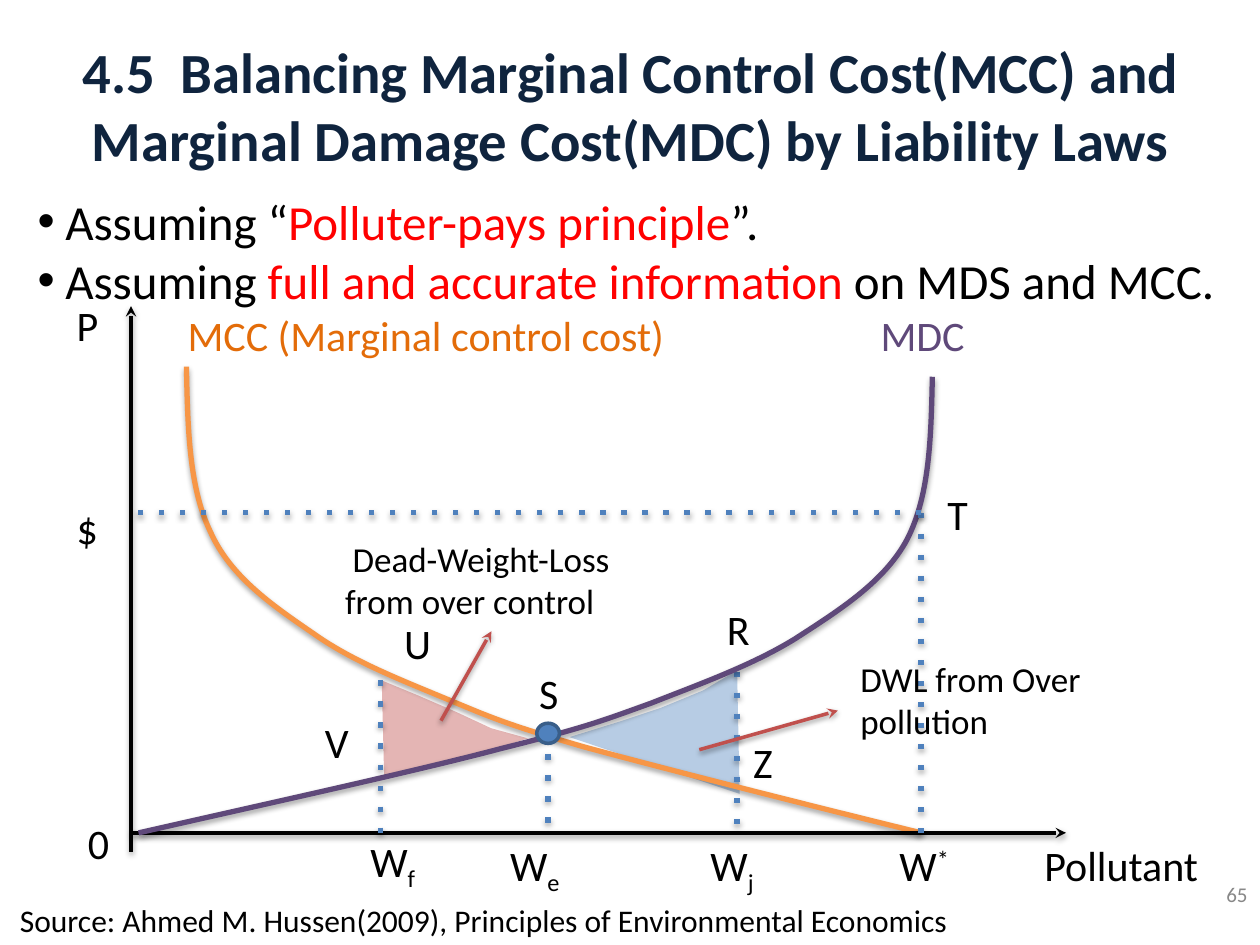
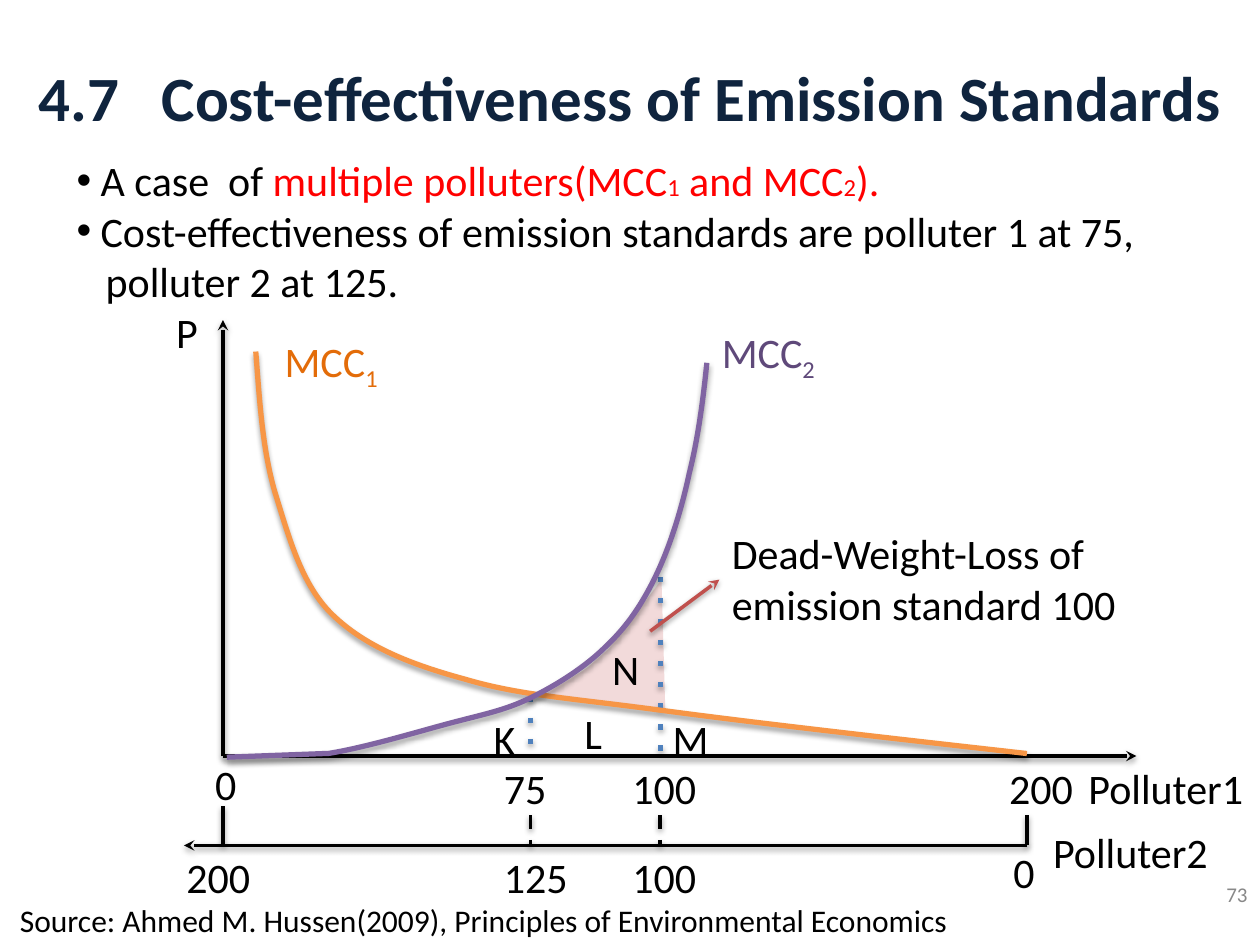
"""Builds two slides on marginal control cost curves and emission standards."""
from dataclasses import dataclass
from typing import NamedTuple, Optional

from lxml.etree import SubElement
from pptx import Presentation
from pptx.dml.color import RGBColor
from pptx.enum.shapes import MSO_CONNECTOR, MSO_SHAPE
from pptx.enum.text import MSO_ANCHOR, MSO_AUTO_SIZE, PP_ALIGN
from pptx.oxml.ns import qn
from pptx.util import Cm, Pt

FONT = "Calibri"
BLACK, RED, NAVY, GRAY = "000000", "FF0000", "0F243E", "888888"
ORANGE, ORANGE_TEXT = "F79646", "E36C09"
PURPLE, PURPLE_LIGHT = "5F497A", "8064A2"
BLUE, BLUE_EDGE, BRICK = "4F81BD", "395E89", "C0504D"
SOURCE = "Source: Ahmed M. Hussen(2009), Principles of Environmental Economics"

Point = tuple[float, float]


class Piece(NamedTuple):
    text: str
    color: str = BLACK
    size: float = 24
    baseline: int = 0


@dataclass
class Line:
    pieces: list[Piece]
    bullet: bool = False
    indent: float = 0
    first: float = 0


@dataclass
class Label:
    text: str
    left: float
    top: float
    width: float = 0.53
    height: float = 0.5
    color: str = BLACK
    size: float = 24
    suffix: str = ""
    baseline: int = -25
    rotation: float = 0
    first: float = 0


@dataclass
class Stroke:
    start: Point
    end: Point
    color: str = BLACK
    width: float = 2
    dash: Optional[str] = None
    arrow: bool = False


@dataclass
class Curve:
    points: list[Point]
    color: str


@dataclass
class Area:
    points: list[Point]
    color: str
    opacity: int = 100


def inch(value: float) -> Cm:
    """Turn inches into a centimetre length."""
    return Cm(value * 2.54)


def rgb(color: str) -> RGBColor:
    """Turn a hex string into a colour."""
    return RGBColor.from_string(color)


def cast_shadow(shape) -> None:
    """Give a line the soft shadow that falls straight down."""
    effects = shape.element.spPr.find(qn("a:effectLst"))
    if effects is None:
        effects = SubElement(shape.element.spPr, qn("a:effectLst"))
    shadow = SubElement(effects, qn("a:outerShdw"), blurRad="40000", dist="20000",
                        dir="5400000", rotWithShape="0")
    color = SubElement(shadow, qn("a:srgbClr"), val=BLACK)
    SubElement(color, qn("a:alpha"), val="38000")


def fill_paragraph(paragraph, line: Line) -> None:
    """Set indents, bullet and runs of a paragraph."""
    properties = paragraph._p.get_or_add_pPr()
    hanging = -line.indent if line.bullet else line.first
    properties.set("marL", str(inch(line.indent)))
    properties.set("indent", str(inch(hanging)))
    if line.bullet:
        bullet_color = SubElement(properties, qn("a:buClr"))
        SubElement(bullet_color, qn("a:srgbClr"), val=BLACK)
        SubElement(properties, qn("a:buFont"), typeface="Arial")
        SubElement(properties, qn("a:buChar"), char="•")
    for piece in line.pieces:
        run = paragraph.add_run()
        run.text = piece.text
        run.font.name, run.font.size = FONT, Pt(piece.size)
        run.font.color.rgb = rgb(piece.color)
        if piece.baseline:
            run._r.get_or_add_rPr().set("baseline", str(piece.baseline * 1000))


def add_text(slide, lines: list[Line], left: float, top: float, width: float, height: float):
    """Add a wrapping text box and return it."""
    box = slide.shapes.add_textbox(inch(left), inch(top), inch(width), inch(height))
    frame = box.text_frame
    frame.word_wrap = True
    for index, line in enumerate(lines):
        paragraph = frame.add_paragraph() if index else frame.paragraphs[0]
        fill_paragraph(paragraph, line)
    return box


def add_label(slide, label: Label) -> None:
    """Add a short label with an optional raised or lowered suffix."""
    pieces = [Piece(label.text, label.color, label.size)]
    if label.suffix:
        pieces.append(Piece(label.suffix, label.color, label.size, label.baseline))
    box = add_text(slide, [Line(pieces, first=label.first)],
                   label.left, label.top, label.width, label.height)
    box.rotation = label.rotation


def add_stroke(slide, stroke: Stroke) -> None:
    """Add a straight line, dashed or with an arrowhead if asked."""
    ends = [inch(value) for value in (*stroke.start, *stroke.end)]
    connector = slide.shapes.add_connector(MSO_CONNECTOR.STRAIGHT, *ends)
    connector.line.color.rgb = rgb(stroke.color)
    connector.line.width = Pt(stroke.width)
    outline = connector.element.spPr.find(qn("a:ln"))
    if stroke.dash:
        SubElement(outline, qn("a:prstDash"), val=stroke.dash)
    if stroke.arrow:
        SubElement(outline, qn("a:tailEnd"), type="stealth")
    cast_shadow(connector)


def add_outline(slide, points: list[Point], close: bool):
    """Add a freeform through the points and return it."""
    start, *rest = [(inch(x), inch(y)) for x, y in points]
    builder = slide.shapes.build_freeform(*start)
    builder.add_line_segments(rest, close=close)
    shape = builder.convert_to_shape()
    shape.shadow.inherit = False
    return shape


def add_curve(slide, curve: Curve) -> None:
    """Add a smooth cost curve through every third point, the others steering it."""
    shape = add_outline(slide, curve.points[::3], close=False)
    for index, segment in enumerate(list(shape.element.iter(qn("a:lnTo")))):
        outline = segment.getparent()
        bend = SubElement(outline, qn("a:cubicBezTo"))
        for x, y in curve.points[3 * index + 1:3 * index + 4]:
            SubElement(bend, qn("a:pt"), x=str(inch(x) - shape.left), y=str(inch(y) - shape.top))
        outline.replace(segment, bend)
    shape.fill.background()
    shape.line.color.rgb = rgb(curve.color)
    shape.line.width = Pt(3)
    cast_shadow(shape)


def add_area(slide, area: Area) -> None:
    """Add a shaded welfare loss area."""
    shape = add_outline(slide, area.points, close=True)
    shape.fill.solid()
    shape.fill.fore_color.rgb = rgb(area.color)
    shape.line.fill.background()
    if area.opacity < 100:
        color = shape.element.spPr.find(qn("a:solidFill"))[0]
        SubElement(color, qn("a:alpha"), val=str(area.opacity * 1000))


def add_balance_point(slide) -> None:
    """Mark the crossing of the two curves."""
    dot = slide.shapes.add_shape(MSO_SHAPE.OVAL, inch(4.26), inch(5.74), inch(0.18), inch(0.16))
    dot.shadow.inherit = False
    dot.fill.solid()
    dot.fill.fore_color.rgb = rgb(BLUE)
    dot.line.color.rgb = rgb(BLUE_EDGE)
    dot.line.width = Pt(2)


def start_slide(presentation, title: str, size: float, left: float, top: float,
                width: float, number: str):
    """Add a slide with its title, page number and source line."""
    slide = presentation.slides.add_slide(presentation.slide_layouts[5])
    shape = slide.shapes.title
    shape.left, shape.top, shape.width, shape.height = map(inch, (left, top, width, 1.25))
    frame = shape.text_frame
    frame.text = title
    frame.auto_size = MSO_AUTO_SIZE.NONE
    frame.vertical_anchor = MSO_ANCHOR.MIDDLE
    paragraph = frame.paragraphs[0]
    paragraph.alignment = PP_ALIGN.CENTER
    font = paragraph.runs[0].font
    font.name, font.size, font.bold = FONT, Pt(size), True
    font.color.rgb = rgb(NAVY)
    page = add_text(slide, [Line([Piece(number, GRAY, 12)])], 9.49, 6.9, 0.51, 0.4)
    page.text_frame.vertical_anchor = MSO_ANCHOR.MIDDLE
    page.text_frame.paragraphs[0].alignment = PP_ALIGN.RIGHT
    add_label(slide, Label(SOURCE, 0.06, 7.1, 7.84, 0.4, size=18))
    return slide


def draw(slide, items: list) -> None:
    """Draw diagram elements from back to front."""
    painters = {Area: add_area, Curve: add_curve, Stroke: add_stroke, Label: add_label}
    for item in items:
        painters[type(item)](slide, item)


def build_liability_slide(presentation) -> None:
    """Build the slide that balances control and damage cost."""
    slide = start_slide(presentation, "4.5  Balancing Marginal Control Cost(MCC) and "
                        "Marginal Damage Cost(MDC) by Liability Laws", 32.4, 0.2, 0.21, 9.61, "65")
    add_text(slide, [
        Line([Piece("Assuming “", size=28), Piece("Polluter-pays principle", RED, 28),
              Piece("”.", size=28)], True, 0.22),
        Line([Piece("Assuming ", size=28), Piece("full and accurate information ", RED, 28),
              Piece("on MDS and MCC.", size=28)], True, 0.22),
    ], 0.2, 1.47, 9.57, 1.04)
    draw(slide, [
        Area([(3.03, 5.4), (3.05, 6.18), (3.5, 6.08), (4.19, 5.86), (3.9, 5.78),
              (3.62, 5.65), (3.32, 5.52)], "D99593", 69),
        Area([(5.85, 5.32), (5.87, 6.3), (4.52, 5.85), (4.94, 5.72), (5.24, 5.62),
              (5.58, 5.48)], "B7CCE4"),
        *[Stroke((x, top), (x, 6.64), BLUE, 3, "dot") for x, top in ((4.35, 5.82), (5.85, 5.33))],
        Curve([(1.48, 2.91), (1.49, 3.39), (1.5, 3.87), (1.67, 4.22), (1.83, 4.58), (2.17, 4.81),
               (2.49, 5.03), (2.8, 5.25), (3.19, 5.4), (3.55, 5.55), (3.91, 5.7), (4.02, 5.75),
               (4.64, 5.93), (5.27, 6.1), (6.29, 6.36), (7.31, 6.61)], ORANGE),
        Stroke((1.04, 6.61), (8.46, 6.61), arrow=True),
        Stroke((1.04, 6.76), (1.04, 2.43), arrow=True),
        Curve([(7.4, 2.99), (7.39, 3.46), (7.38, 3.93), (7.2, 4.28), (7.02, 4.62), (6.65, 4.85),
               (6.31, 5.07), (5.97, 5.28), (5.55, 5.43), (5.17, 5.58), (4.78, 5.72), (4.66, 5.77),
               (3.98, 5.94), (3.3, 6.12), (2.2, 6.36), (1.1, 6.61)], PURPLE),
        Stroke((7.31, 4.07), (7.31, 6.61), BLUE, 3, "dot"),
        Stroke((7.31, 4.07), (1.06, 4.07), BLUE, 3, "dot"),
        Stroke((3.02, 5.4), (3.02, 6.64), BLUE, 3, "dot"),
        Label("MDC", 6.89, 2.41, 2.03, color=PURPLE),
        Label("MCC (Marginal control cost)", 1.39, 2.41, 4.63, color=ORANGE_TEXT),
        *[Label(*spot) for spot in (
            ("P", 0.51, 2.33), ("0", 0.6, 6.44), ("$", 0.51, 3.94), ("T", 7.42, 3.83),
            ("S", 4.18, 5.25), ("R", 5.67, 4.74), ("U", 3.11, 4.85), ("V", 2.48, 5.64),
            ("Z", 5.88, 5.8), ("Pollutant", 8.19, 6.61, 1.81))],
        *[Label("W", left, top, 0.71, suffix=suffix, baseline=baseline)
          for suffix, left, top, baseline in (("f", 2.84, 6.58, -25), ("e", 3.95, 6.61, -25),
                                              ("j", 5.54, 6.61, -25), ("*", 7.04, 6.61, 30))],
        Label("Dead-Weight-Loss from over control", 2.64, 4.22, 2.7, 0.77, size=20, first=0.06),
        Label("DWL from Over pollution", 6.73, 5.17, 2.64, 0.77, size=20),
        Stroke((3.5, 5.72), (3.9, 5.01), BRICK, arrow=True),
        Stroke((5.55, 5.95), (6.65, 5.64), BRICK, arrow=True),
    ])
    add_balance_point(slide)


def build_standards_slide(presentation) -> None:
    """Build the slide on two polluters under one emission standard."""
    slide = start_slide(presentation, "4.7   Cost-effectiveness of Emission Standards",
                        36, 0, 0.14, 10, "73")
    add_text(slide, [
        Line([Piece("A case  of "), Piece("multiple polluters(MCC", RED), Piece("1", RED, 14),
              Piece(" and MCC", RED), Piece("2", RED, 14), Piece(").", RED)], True, 0.19),
        Line([Piece("Cost-effectiveness of emission standards are polluter 1 at 75,")], True, 0.19),
        Line([Piece("polluter 2 at 125.")], indent=0.23),
    ], 0.51, 1.18, 8.98, 1.31)
    draw(slide, [
        Area([(5.25, 4.6), (5.28, 5.64), (4.29, 5.53), (4.49, 5.41), (4.66, 5.3),
              (4.83, 5.15), (4.99, 4.95)], "F2DADA"),
        *[Stroke((1.77, 6), end, arrow=True) for end in ((9.02, 6), (1.77, 2.54))],
        *[Stroke((x, top), (x, 6), BLUE, 3, "dot") for x, top in ((4.21, 5.53), (5.24, 4.58))],
        Curve([(2.03, 2.79), (2.06, 3.17), (2.08, 3.55), (2.18, 3.9), (2.29, 4.25), (2.39, 4.64),
               (2.64, 4.88), (2.9, 5.13), (3.25, 5.27), (3.69, 5.39), (4.13, 5.52), (4.53, 5.54),
               (5.27, 5.64), (6.02, 5.74), (7.08, 5.86), (8.15, 5.98)], ORANGE),
        Curve([(1.8, 6.01), (2.07, 6), (2.34, 5.99), (2.61, 5.98), (2.92, 5.93), (3.34, 5.8),
               (3.61, 5.73), (3.88, 5.66), (4.03, 5.63), (4.23, 5.53), (4.43, 5.43), (4.65, 5.29),
               (4.81, 5.13), (4.98, 4.97), (5.1, 4.79), (5.21, 4.56), (5.32, 4.33), (5.41, 4.04),
               (5.47, 3.76), (5.54, 3.48), (5.58, 3.18), (5.61, 2.88)], PURPLE_LIGHT),
        Stroke((8.15, 6.71), (1.46, 6.71), arrow=True),
        *[Stroke((x, top), (x, 6.71), dash=dash) for x, top, dash in (
            (8.15, 6.47, None), (1.77, 6.4, None), (4.21, 6.47, "dash"), (5.24, 6.47, "dash"))],
        Label("MCC", 5.63, 2.54, 1.81, color=PURPLE, suffix="2"),
        Label("MCC", 2.16, 2.61, 1.81, color=ORANGE_TEXT, suffix="1"),
        *[Label(*spot) for spot in (
            ("P", 1.3, 2.38), ("0", 1.61, 5.97), ("K", 3.82, 5.61), ("L", 4.54, 5.57),
            ("N", 4.76, 5.06), ("M", 5.24, 5.61), ("75", 3.9, 6, 0.63), ("100", 4.92, 6, 0.71),
            ("200", 7.91, 6, 0.71), ("100", 4.92, 6.71, 0.71), ("125", 3.9, 6.71, 0.71),
            ("200", 1.38, 6.71, 0.71), ("Polluter1", 8.54, 6, 1.46), ("Polluter2", 8.26, 6.51, 1.74))],
        Label("0", 7.84, 6.71, 0.47, 0.51, rotation=180),
        Label("Dead-Weight-Loss of emission standard 100", 5.71, 4.14, 3.31, 0.91),
        Stroke((5.16, 5.01), (5.71, 4.6), BRICK, arrow=True),
    ])


def main() -> None:
    """Build and save the presentation."""
    presentation = Presentation()
    presentation.slide_width, presentation.slide_height = Cm(25.4), Cm(19.05)
    build_liability_slide(presentation)
    build_standards_slide(presentation)
    presentation.save("out.pptx")


if __name__ == "__main__":
    main()
